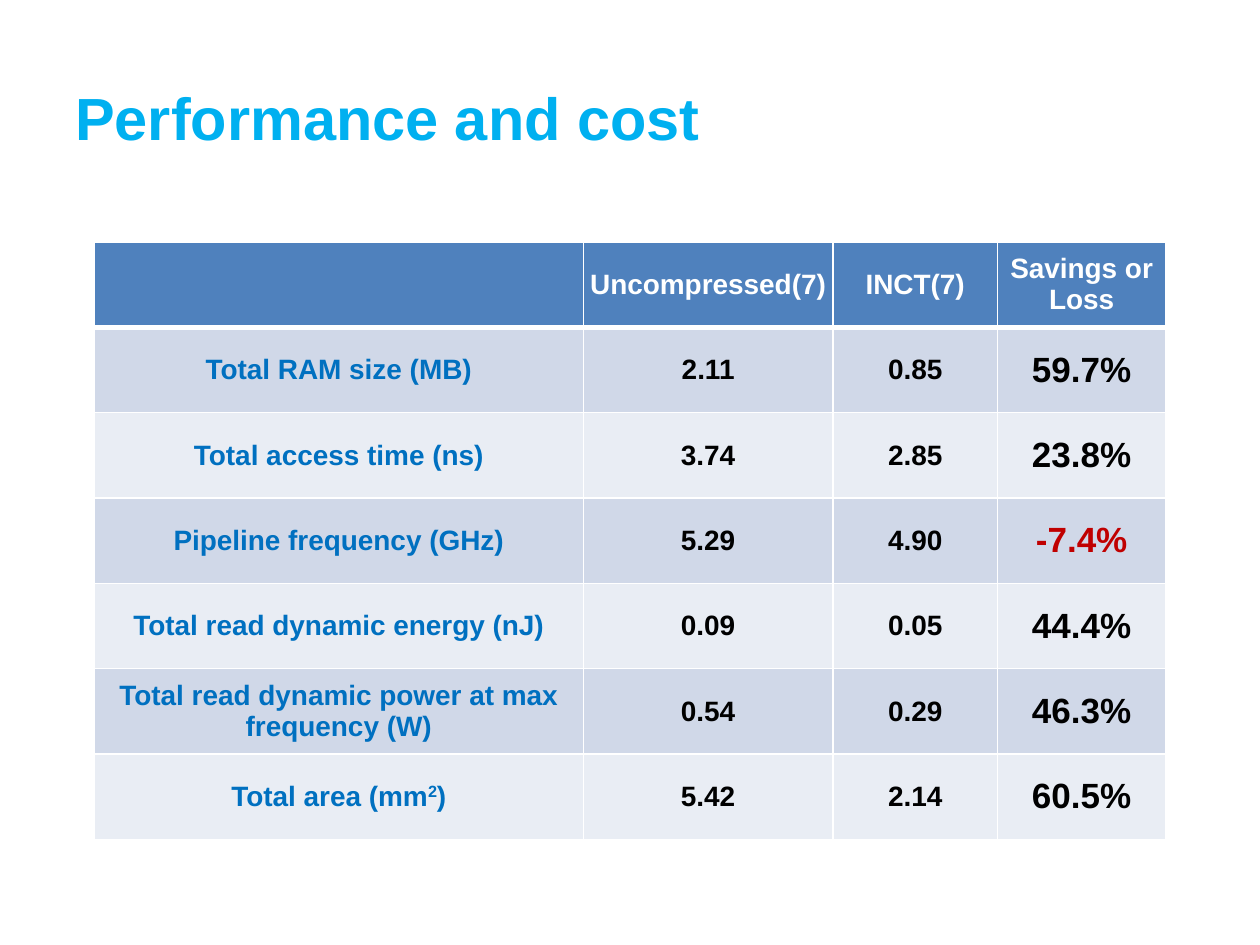
from dataclasses import dataclass

from lxml import etree
from pptx import Presentation
from pptx.dml.color import RGBColor
from pptx.enum.text import MSO_ANCHOR, PP_ALIGN
from pptx.oxml.ns import qn
from pptx.util import Cm, Pt

LEFT, CENTER = PP_ALIGN.LEFT, PP_ALIGN.CENTER
MIDDLE = MSO_ANCHOR.MIDDLE

FONT = "Arial"
WHITE, BLACK = "FFFFFF", "000000"
TITLE_BLUE, LABEL_BLUE, LOSS_RED = "00B0F0", "0070C0", "C00000"
HEADER_FILL = "4F81BD"
BAND_FILLS = ("D0D8E8", "E9EDF4")

COLUMN_WIDTHS = (9.86, 5.03, 3.32, 3.39)
ROW_HEIGHT = 1.72
HEADINGS = ("", "Uncompressed(7)", "INCT(7)", "Savings or Loss")


@dataclass
class Metric:
    label: str  # text between carets is superscript
    uncompressed: str
    inct: str
    change: str


METRICS = (
    Metric("Total RAM size (MB)", "2.11", "0.85", "59.7%"),
    Metric("Total access time (ns)", "3.74", "2.85", "23.8%"),
    Metric("Pipeline frequency (GHz)", "5.29", "4.90", "-7.4%"),
    Metric("Total read dynamic energy (nJ)", "0.09", "0.05", "44.4%"),
    Metric("Total read dynamic power at max frequency (W)", "0.54", "0.29", "46.3%"),
    Metric("Total area (mm^2^)", "5.42", "2.14", "60.5%"),
)


def rgb(color: str) -> RGBColor:
    return RGBColor.from_string(color)


def write_text(frame, text: str, *, size: float = 16, color: str = BLACK,
               align=CENTER) -> None:
    paragraph = frame.paragraphs[0]
    paragraph.alignment = align
    for index, part in enumerate(text.split("^")):
        run = paragraph.add_run()
        run.text = part
        run.font.name = FONT
        run.font.size = Pt(size)
        run.font.bold = True
        run.font.color.rgb = rgb(color)
        if index % 2:
            run.font._element.set("baseline", "30000")


def set_borders(cell, *, bottom: float = 1, top: float = 1) -> None:
    properties = cell._tc.get_or_add_tcPr()
    sides = (("a:lnL", 1), ("a:lnR", 1), ("a:lnT", top), ("a:lnB", bottom))
    for index, (side, width) in enumerate(sides):
        line = etree.Element(qn(side), w=str(Pt(width)))
        fill = etree.SubElement(line, qn("a:solidFill"))
        etree.SubElement(fill, qn("a:srgbClr"), val=WHITE)
        properties.insert(index, line)  # borders come before the fill


def fill_cell(cell, text: str, fill: str, *, top: float = 1, bottom: float = 1,
              **text_format) -> None:
    cell.fill.solid()
    cell.fill.fore_color.rgb = rgb(fill)
    cell.vertical_anchor = MIDDLE
    cell.margin_left = cell.margin_right = cell.margin_top = cell.margin_bottom = 0
    set_borders(cell, top=top, bottom=bottom)
    if text:
        write_text(cell.text_frame, text, **text_format)


def add_title(slide, text: str) -> None:
    title = slide.shapes.add_textbox(Cm(1.27), Cm(0.76), Cm(22.86), Cm(3.18))
    title.text_frame.word_wrap = True
    title.text_frame.vertical_anchor = MIDDLE
    write_text(title.text_frame, text, size=34, color=TITLE_BLUE, align=LEFT)


def add_metrics_table(slide) -> None:
    row_count = len(METRICS) + 1
    table = slide.shapes.add_table(
        row_count, len(COLUMN_WIDTHS), Cm(1.9), Cm(4.88),
        Cm(sum(COLUMN_WIDTHS)), Cm(ROW_HEIGHT * row_count)).table
    for column, width in zip(table.columns, COLUMN_WIDTHS):
        column.width = Cm(width)
    for row in table.rows:
        row.height = Cm(ROW_HEIGHT)

    # Header row, with a thick rule below
    for column, heading in enumerate(HEADINGS):
        fill_cell(table.cell(0, column), heading, HEADER_FILL, bottom=3, color=WHITE)

    # Banded metric rows
    for row, metric in enumerate(METRICS, start=1):
        fill = BAND_FILLS[(row - 1) % 2]
        change_color = LOSS_RED if metric.change.startswith("-") else BLACK
        contents = (
            (metric.label, 16, LABEL_BLUE),
            (metric.uncompressed, 16, BLACK),
            (metric.inct, 16, BLACK),
            (metric.change, 20, change_color),
        )
        for column, (text, size, color) in enumerate(contents):
            fill_cell(table.cell(row, column), text, fill,
                      top=3 if row == 1 else 1, size=size, color=color)


def main() -> None:
    presentation = Presentation()
    presentation.slide_width, presentation.slide_height = Cm(25.4), Cm(19.05)
    slide = presentation.slides.add_slide(presentation.slide_layouts[6])
    add_title(slide, "Performance and cost")
    add_metrics_table(slide)
    presentation.save("out.pptx")


if __name__ == "__main__":
    main()
